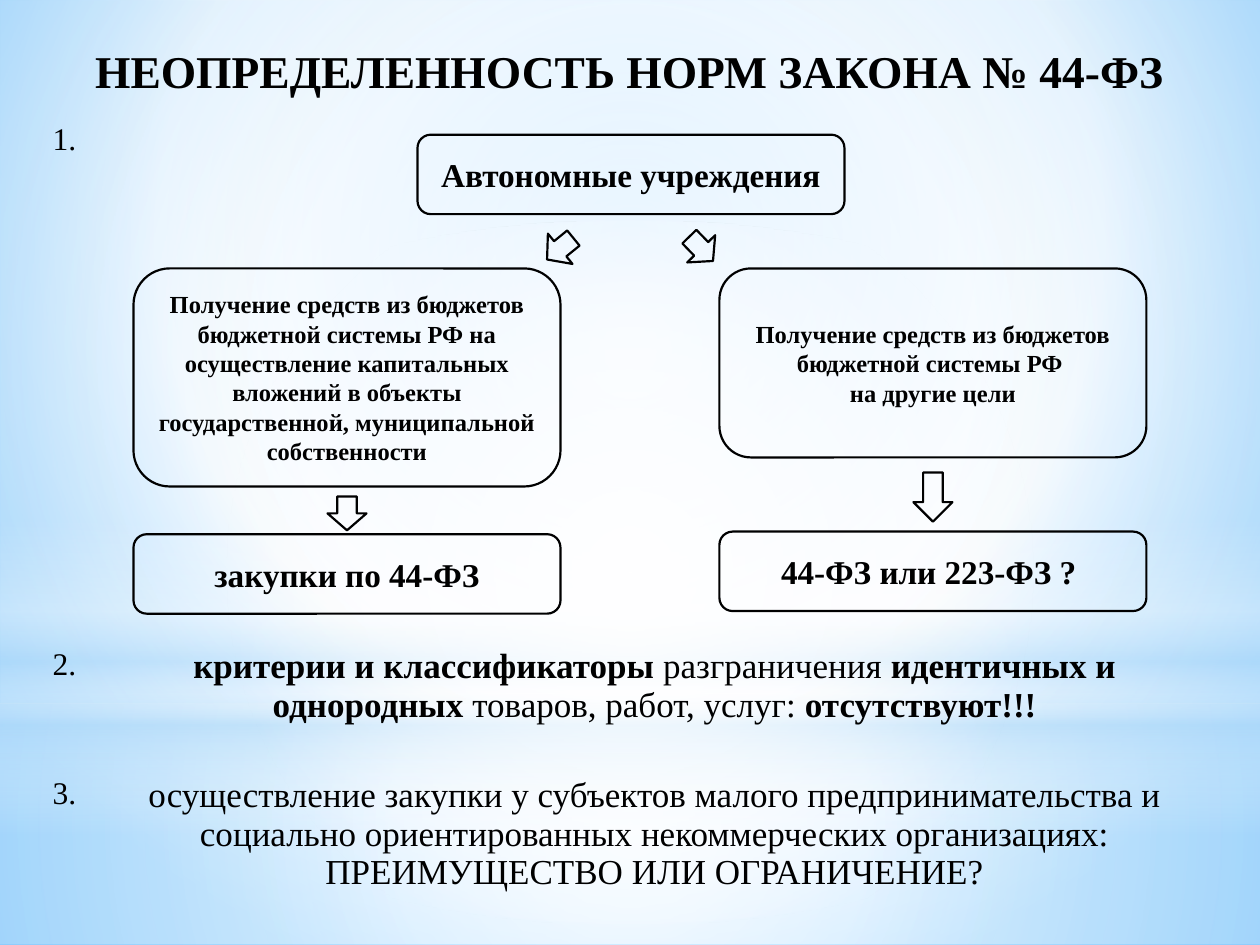
from collections import namedtuple
from dataclasses import dataclass

from lxml import etree
from pptx import Presentation
from pptx.dml import color as c
from pptx.enum import shapes as s, text as t
from pptx.oxml import ns
from pptx.util import Pt

Box = namedtuple("Box", "left top width height")


@dataclass(frozen=True)
class Theme:
    """Colours, font and type sizes of the deck."""
    ink: str = "000000"
    white: str = "FFFFFF"
    haze: str = "B4DCFA"
    sky: str = "9ED5FF"
    deep: str = "5BB9FF"
    font: str = "Times New Roman"
    title: int = 26
    item: int = 20
    label: int = 19
    number: int = 18
    detail: int = 14
    outline: float = 1.25


THEME = Theme()
NO_STYLE = "{2D5ABB26-0587-4C30-8999-92F81FD0307C}"
CENTRE = (50, 50, 50, 50)


def points(box):
    """Turn a box into four lengths in points."""
    return [Pt(length) for length in box]


def set_gradient(fill, holder, stops, focus=None):
    """Give the holder a gradient, circular around a focus or else vertical."""
    fill.solid()
    gradient = etree.Element(ns.qn("a:gradFill"), rotWithShape="1")
    stop_list = etree.SubElement(gradient, ns.qn("a:gsLst"))
    for position, colour, opacity in stops:
        stop = etree.SubElement(stop_list, ns.qn("a:gs"), pos=str(position * 1000))
        tint = etree.SubElement(stop, ns.qn("a:srgbClr"), val=colour)
        if opacity < 100:
            etree.SubElement(tint, ns.qn("a:alpha"), val=str(opacity * 1000))
    if focus:
        circle = etree.SubElement(gradient, ns.qn("a:path"), path="circle")
        sides = {side: str(part * 1000) for side, part in zip("ltrb", focus)}
        etree.SubElement(circle, ns.qn("a:fillToRect"), sides)
    else:
        etree.SubElement(gradient, ns.qn("a:lin"), ang="5400000", scaled="0")
    holder.replace(holder.find(ns.qn("a:solidFill")), gradient)


def write(frame, paragraphs, size, bold=False):
    """Fill a frame with centred paragraphs of text or of (text, bold) spans."""
    for index, content in enumerate(paragraphs):
        para = frame.add_paragraph() if index else frame.paragraphs[0]
        para.alignment = t.PP_ALIGN.CENTER
        para.font.name = THEME.font
        para.font.size = Pt(size)
        para.font.color.rgb = c.RGBColor.from_string(THEME.ink)
        if isinstance(content, str):
            para.font.bold = bold
            para.add_run().text = content
            continue
        for words, strong in content:
            span = para.add_run()
            span.text = words
            span.font.bold = strong


def add_backdrop(page, box):
    """Paint the sky background and its layers of haze over the box."""
    white, haze = THEME.white, THEME.haze
    fill = page.background.fill
    fill.solid()
    set_gradient(fill, page.element.find(".//" + ns.qn("p:bgPr")),
                 [(0, THEME.sky, 100), (60, white, 100), (100, THEME.deep, 100)],
                 (20, 10, 20, 60))
    rectangle, ellipse = s.MSO_SHAPE.RECTANGLE, s.MSO_SHAPE.OVAL
    layers = [
        (rectangle, 402, 138, CENTRE, [(0, white, 91), (37, white, 76), (100, haze, 79)]),
        (rectangle, 0, 402, CENTRE, [(0, white, 89), (48, white, 62), (100, haze, 79)]),
        (rectangle, 297, 180, None, [(0, white, 0), (29, white, 30), (45, haze, 40),
                                     (55, white, 26), (65, haze, 60), (100, white, 0)]),
        (ellipse, 126, 402, CENTRE, [(0, white, 100), (56, white, 0)]),
    ]
    for kind, top, height, focus, stops in layers:
        area = Box(box.left, box.top + top, box.width, height)
        layer = page.shapes.add_shape(kind, *points(area))
        layer.shadow.inherit = False
        layer.line.fill.background()
        set_gradient(layer.fill, layer.element.spPr, stops, focus)


def add_title(page, box):
    """Place the heading in the box."""
    frame = page.shapes.add_textbox(*points(box)).text_frame
    frame.word_wrap = True
    write(frame, ["НЕОПРЕДЕЛЕННОСТЬ НОРМ ЗАКОНА № 44-ФЗ"], THEME.title, True)


def add_items(page, box):
    """Place the table of numbered items in the box."""
    items = [
        (300.2, []),
        (73.4, [[("критерии и классификаторы", True), (" разграничения ", False),
                 ("идентичных и однородных ", True), ("товаров, работ, услуг: ", False),
                 ("отсутствуют!!!", True)]]),
        (74.9, ["осуществление закупки у субъектов малого предпринимательства и "
                "социально ориентированных некоммерческих организациях:",
                "ПРЕИМУЩЕСТВО ИЛИ ОГРАНИЧЕНИЕ?"]),
    ]
    table = page.shapes.add_table(len(items), 2, *points(box)).table
    table.first_row = table.horz_banding = False
    table._tbl.tblPr.find(ns.qn("a:tableStyleId")).text = NO_STYLE
    number_width = 33.1
    table.columns[0].width = Pt(number_width)
    table.columns[1].width = Pt(box.width - number_width)
    for index, (height, paragraphs) in enumerate(items):
        table.rows[index].height = Pt(height)
        number, body = table.cell(index, 0), table.cell(index, 1)
        number.fill.background()
        body.fill.background()
        write(number.text_frame, [f"{index + 1}."], THEME.number)
        write(body.text_frame, paragraphs, THEME.item)


def add_outline(page, kind, box):
    """Add an unfilled shape with a thin dark line."""
    shape = page.shapes.add_shape(kind, *points(box))
    shape.shadow.inherit = False
    shape.fill.background()
    shape.line.color.rgb = c.RGBColor.from_string(THEME.ink)
    shape.line.width = Pt(THEME.outline)
    return shape


def add_flow(page, box):
    """Place the tree of institutions, funds and laws in the box."""
    width, low, short = 244, 45.4, 19.4
    middle = (box.width - width) / 2 - 5.1
    right = box.width - width
    nodes = [
        (middle, 0, low, THEME.label, ["Автономные учреждения"]),
        (0, 76.4, 124.6, THEME.detail,
         ["Получение средств из бюджетов бюджетной системы РФ на осуществление "
          "капитальных вложений в объекты государственной, муниципальной собственности"]),
        (right, 76.4, 108, THEME.detail,
         ["Получение средств из бюджетов бюджетной системы РФ ", "на другие цели"]),
        (0, 228.3, low, THEME.label, ["закупки по 44-ФЗ"]),
        (right, 226.8, low, THEME.label, ["44-ФЗ или 223-ФЗ ? "]),
    ]
    for left, top, height, size, paragraphs in nodes:
        area = Box(box.left + left, box.top + top, width, height)
        node = add_outline(page, s.MSO_SHAPE.ROUNDED_RECTANGLE, area)
        node.text_frame.word_wrap = True
        node.text_frame.vertical_anchor = t.MSO_ANCHOR.MIDDLE
        write(node.text_frame, paragraphs, size, True)

    arrow_width = 22.3
    arrows = [
        (right + width / 2, 193, 28.1, 0),
        (width / 2, 206.7, short, 0),
        (243.8, 55.5, short, 50.9),
        (324.4, 55.5, short, 315.8),
    ]
    for centre, top, height, angle in arrows:
        area = Box(box.left + centre - arrow_width / 2, box.top + top, arrow_width, height)
        add_outline(page, s.MSO_SHAPE.DOWN_ARROW, area).rotation = angle


def main():
    """Build the deck and save it."""
    deck = Presentation()
    deck.slide_width, deck.slide_height = Pt(720), Pt(540)
    page = deck.slides.add_slide(deck.slide_layouts[6])
    add_backdrop(page, Box(0, 0, 720, 540))
    add_title(page, Box(42.5, 21, 635, 39))
    add_items(page, Box(20.2, 66.2, 674.6, 448.5))
    add_flow(page, Box(76.3, 77, 578.8, 273.7))
    deck.save("out.pptx")


if __name__ == "__main__":
    main()
